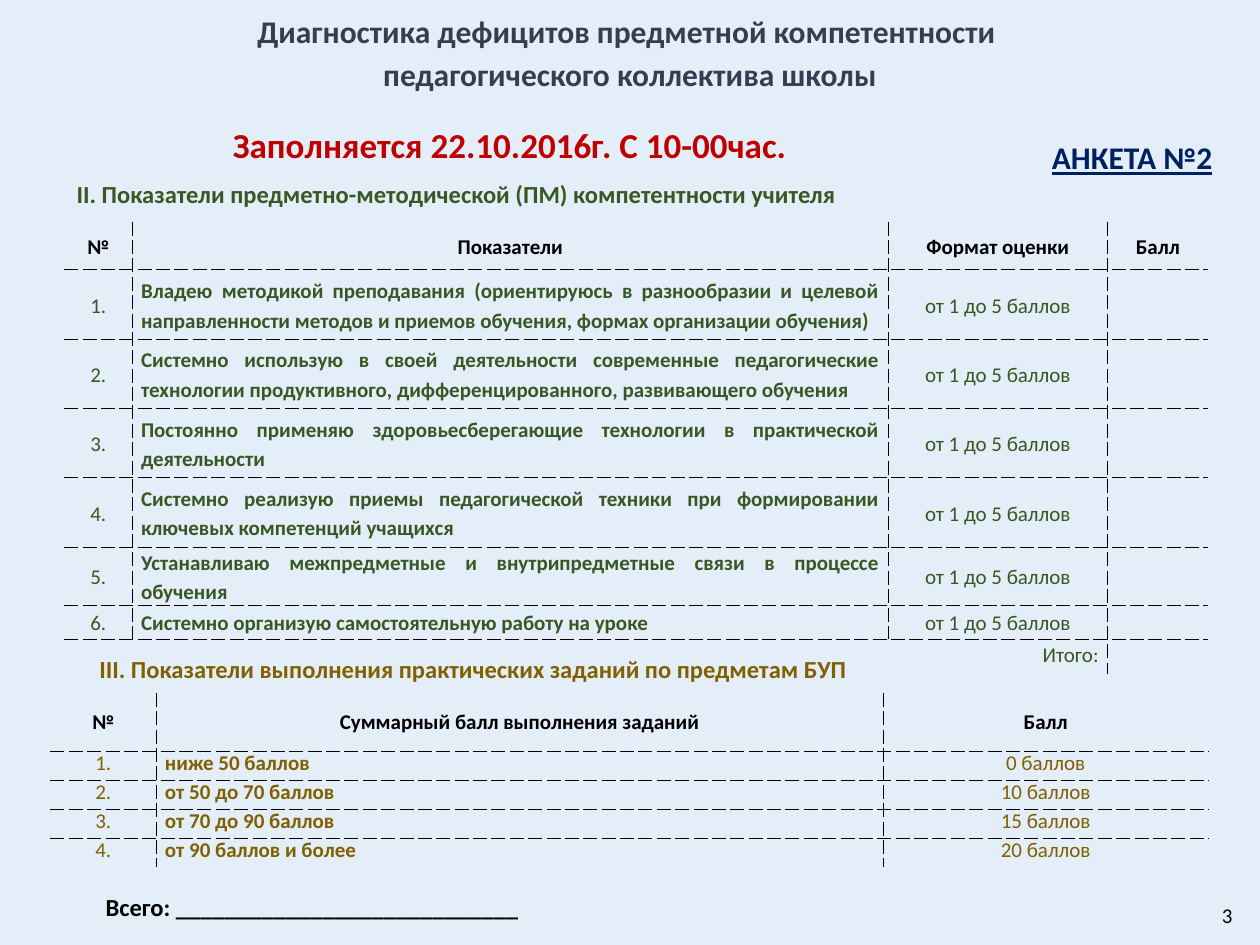
from lxml.etree import SubElement
from pptx import Presentation
from pptx.dml.color import RGBColor
from pptx.enum.text import MSO_ANCHOR as Anchor, MSO_AUTO_SIZE as Fit, PP_ALIGN as Align
from pptx.oxml.ns import qn
from pptx.util import Inches, Pt

FONT = "Calibri"
SKY = RGBColor(0xE3, 0xEE, 0xF8)
SLATE = RGBColor(0x33, 0x3F, 0x50)
GREEN = RGBColor(0x38, 0x57, 0x23)
OCHRE = RGBColor(0x80, 0x60, 0x00)
RED = RGBColor(0xC0, 0x00, 0x00)
NAVY = RGBColor(0x00, 0x20, 0x60)
BLACK = RGBColor(0x00, 0x00, 0x00)

SKILLS = [
    "Владею методикой преподавания (ориентируюсь в разнообразии и целевой "
    "направленности методов и приемов обучения, формах организации обучения)",
    "Системно использую в своей деятельности современные педагогические "
    "технологии продуктивного, дифференцированного, развивающего обучения",
    "Постоянно применяю здоровьесберегающие технологии в практической деятельности",
    "Системно реализую приемы педагогической техники при формировании "
    "ключевых компетенций учащихся",
    "Устанавливаю межпредметные и внутрипредметные связи в процессе обучения",
    "Системно организую самостоятельную работу на уроке",
]
SCORES = [
    ("ниже 50 баллов", "0 баллов"),
    ("от 50 до 70 баллов", "10 баллов"),
    ("от 70 до 90 баллов", "15 баллов"),
    ("от 90 баллов и более", "20 баллов"),
]


def style(frame, size, color, bold=True, align=Align.LEFT, space=1.0):
    for para in frame.paragraphs:
        para.alignment = align
        para.line_spacing = space
        for run in para.runs:
            font = run.font
            font.name, font.size, font.bold = FONT, Pt(size), bold
            font.color.rgb = color


def add_title(slide, text):
    title = slide.shapes.title
    title.left, title.top, title.width, title.height = map(Inches, (0, 0, 10, 0.78))
    frame = title.text_frame
    frame.text = text
    frame.auto_size = Fit.NONE
    frame.vertical_anchor = Anchor.TOP
    style(frame, 18, SLATE, align=Align.CENTER, space=1.15)


def add_label(slide, box, text, size, color, bold=True, wrap=True):
    frame = slide.shapes.add_textbox(*map(Inches, box)).text_frame
    frame.text = text
    frame.word_wrap = wrap
    style(frame, size, color, bold)
    return frame


def set_border(cell, side, shown):
    line = SubElement(cell._tc.get_or_add_tcPr(), qn(f"a:ln{side}"), w=str(Pt(0.25)))
    if shown:
        fill = SubElement(line, qn("a:solidFill"))
        SubElement(fill, qn("a:srgbClr"), val=str(BLACK))
        SubElement(line, qn("a:prstDash"), val="sysDash")
    else:
        SubElement(line, qn("a:noFill"))


def set_cell(cell, text, color, bold, align, space, anchor):
    cell.margin_left = cell.margin_right = Inches(0.07)
    cell.margin_top = cell.margin_bottom = 0
    cell.vertical_anchor = anchor
    cell.text = text
    style(cell.text_frame, 12, color, bold, align, space)
    if not text:
        # An empty cell keeps the row low only if its end mark is small too.
        SubElement(cell.text_frame.paragraphs[0]._p, qn("a:endParaRPr"), sz="1200")


def add_grid(slide, spot, cols, heights, rows, color, align, space, anchor):
    """Add a table with dashed inner lines; the second column is bold."""
    box = (*spot, sum(cols), sum(heights))
    shape = slide.shapes.add_table(len(rows), len(cols), *map(Inches, box))
    table = shape.table
    table.first_row = table.horz_banding = False
    for col, width in zip(table.columns, cols):
        col.width = Inches(width)
    for row, height in zip(table.rows, heights):
        row.height = Inches(height)
    for r, row in enumerate(rows):
        for c, text in enumerate(row):
            cell = table.cell(r, c)
            if r == 0:
                set_cell(cell, text, BLACK, True, Align.CENTER, space, Anchor.MIDDLE)
            else:
                side = align if c == 1 else Align.CENTER
                set_cell(cell, text, color, c == 1, side, space, anchor)
            set_border(cell, "L", c > 0)
            set_border(cell, "R", c < len(cols) - 1)
            set_border(cell, "T", r > 0)
            set_border(cell, "B", r < len(rows) - 1)
            cell.fill.background()
    return table


def add_skills(slide):
    rows = [("№", "Показатели", "Формат оценки", "Балл")]
    rows += [(f"{n}.", text, "от 1 до 5 баллов", "") for n, text in enumerate(SKILLS, 1)]
    rows.append(("Итого:", "", "", ""))
    heights = [0.38] + [0.55] * 4 + [0.27, 0.27, 0.28]
    table = add_grid(slide, (0.51, 1.76), (0.54, 6, 1.74, 0.8), heights, rows,
                     GREEN, Align.JUSTIFY, 1.15, Anchor.MIDDLE)
    total = table.cell(len(rows) - 1, 0)
    total.merge(table.cell(len(rows) - 1, 2))
    total.vertical_anchor = Anchor.TOP
    total.text_frame.paragraphs[0].alignment = Align.RIGHT


def add_scores(slide):
    rows = [("№", "Суммарный балл выполнения заданий", "Балл")]
    rows += [(f"{n}.", *pair) for n, pair in enumerate(SCORES, 1)]
    add_grid(slide, (0.4, 5.5), (0.84, 5.77, 2.58), [0.46] + [0.23] * 4, rows,
             OCHRE, Align.LEFT, 1.0, Anchor.TOP)


def main():
    deck = Presentation()
    deck.slide_width, deck.slide_height = Inches(10), Inches(7.5)
    slide = deck.slides.add_slide(deck.slide_layouts[5])
    back = slide.background.fill
    back.solid()
    back.fore_color.rgb = SKY

    add_title(slide, "Диагностика дефицитов предметной компетентности \n"
                     "педагогического коллектива школы")
    add_label(slide, (0.51, 1.37, 8.4, 0.34),
              "II. Показатели предметно-методической (ПМ) компетентности учителя", 14, GREEN)
    add_skills(slide)
    add_label(slide, (0.69, 5.14, 8.4, 0.34),
              "III. Показатели выполнения практических заданий по предметам БУП", 14, OCHRE)
    add_scores(slide)
    add_label(slide, (0.74, 7.03, 3.56, 0.34),
              "Всего: ____________________________", 14, BLACK, wrap=False)
    add_label(slide, (9.6, 7.11, 0.27, 0.32), "3", 12, BLACK, bold=False)
    add_label(slide, (1.75, 0.93, 4.63, 0.44),
              "Заполняется 22.10.2016г. С 10-00час.", 20, RED, wrap=False)
    form = add_label(slide, (8.25, 1.05, 1.49, 0.4), "АНКЕТА №2", 18, NAVY, wrap=False)
    form.paragraphs[0].runs[0].font.underline = True
    deck.save("out.pptx")


if __name__ == "__main__":
    main()
